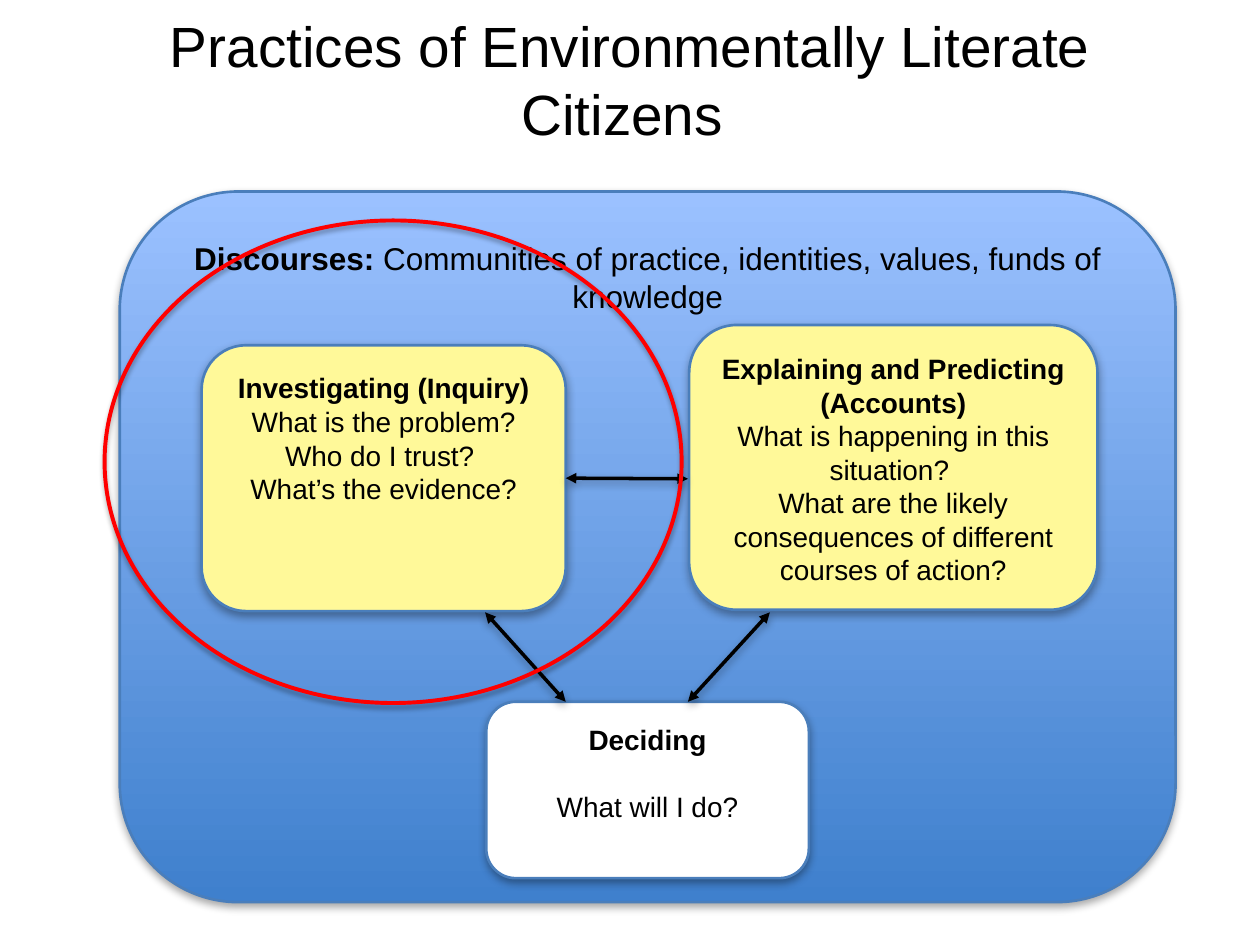
from lxml import etree
from pptx import Presentation
from pptx.dml.color import RGBColor
from pptx.enum.shapes import MSO_CONNECTOR, MSO_SHAPE
from pptx.enum.text import MSO_ANCHOR, PP_ALIGN
from pptx.oxml import parse_xml
from pptx.oxml.ns import nsdecls, qn
from pptx.util import Inches, Pt

BLACK = RGBColor(0x00, 0x00, 0x00)
WHITE = RGBColor(0xFF, 0xFF, 0xFF)
YELLOW = RGBColor(0xFF, 0xF9, 0x99)
RED = RGBColor(0xFF, 0x00, 0x00)
EDGE = RGBColor(0x4A, 0x7E, 0xBB)
SKY = RGBColor(0x9B, 0xC1, 0xFF)
BLUE = RGBColor(0x3F, 0x80, 0xCD)

TITLE = "Practices of Environmentally Literate Citizens "
PANEL = (0.95, 1.52, 8.38, 5.64)
FOCUS = (0.83, 1.75, 4.58, 3.83)
DISCOURSES = [[("Discourses:", True),
               (" Communities of practice, identities, values, funds of knowledge", False)]]
PRACTICES = {
    "explaining": dict(
        at=(5.47, 2.58, 3.24, 2.26), fill=YELLOW, gap=0,
        head="Explaining and Predicting (Accounts)",
        questions=["What is happening in this situation? ",
                   "What are the likely consequences of different courses of action?"]),
    "investigating": dict(
        at=(1.6, 2.74, 2.89, 2.11), fill=YELLOW, gap=0,
        head="Investigating (Inquiry)",
        questions=["What is the problem?", "Who do I trust? ", "What’s the evidence?"]),
    "deciding": dict(
        at=(3.86, 5.57, 2.56, 1.4), fill=WHITE, gap=19,
        head="Deciding", questions=["What will I do?"]),
}
LINKS = [((4.49, 3.8), (5.46, 3.8)),
         ((3.85, 4.86), (4.49, 5.57)),
         ((5.46, 5.57), (6.11, 4.86))]


def write(tf, paragraphs, size, gap=0, inset=0.1, anchor=MSO_ANCHOR.TOP):
    tf.word_wrap = True
    tf.vertical_anchor = anchor
    tf.margin_left = tf.margin_right = tf.margin_top = tf.margin_bottom = Inches(inset)
    for i, runs in enumerate(paragraphs):
        p = tf.paragraphs[0] if i == 0 else tf.add_paragraph()
        p.alignment = PP_ALIGN.CENTER
        if i and gap:
            p.space_before = Pt(gap)
        for text, bold in runs:
            r = p.add_run()
            r.text = text
            r.font.name, r.font.size, r.font.bold = "Arial", Pt(size), bold
            r.font.color.rgb = BLACK


def cast_shadow(sp, blur=5, dist=2.1):
    props = sp.element.spPr
    effects = props.find(qn("a:effectLst"))
    if effects is None:
        effects = etree.SubElement(props, qn("a:effectLst"))
    effects.append(parse_xml(
        f'<a:outerShdw {nsdecls("a")} blurRad="{Pt(blur)}" dist="{Pt(dist)}" dir="5400000" '
        'rotWithShape="0"><a:srgbClr val="000000"><a:alpha val="35000"/></a:srgbClr>'
        '</a:outerShdw>'))


def add_shape(slide, kind, at, line, width, **shadow):
    sp = slide.shapes.add_shape(kind, *map(Inches, at))
    sp.line.color.rgb = line
    sp.line.width = Pt(width)
    sp.shadow.inherit = False
    cast_shadow(sp, **shadow)
    return sp


def add_box(slide, at):
    sp = add_shape(slide, MSO_SHAPE.ROUNDED_RECTANGLE, at, EDGE, 1.5)
    sp.adjustments[0] = 0.167
    return sp


def add_link(slide, start, end):
    link = slide.shapes.add_connector(MSO_CONNECTOR.STRAIGHT, *map(Inches, start + end))
    link.line.color.rgb = BLACK
    link.line.width = Pt(2)
    ln = link.line._get_or_add_ln()
    for tag in ("a:headEnd", "a:tailEnd"):
        etree.SubElement(ln, qn(tag), type="triangle")
    cast_shadow(link)
    return link


def main():
    prs = Presentation()
    prs.slide_width, prs.slide_height = Inches(10), Inches(7.5)
    slide = prs.slides.add_slide(prs.slide_layouts[6])

    title = slide.shapes.add_textbox(*map(Inches, (0.5, 0.25, 9, 0.75)))
    write(title.text_frame, [[(TITLE, False)]], 32.4, anchor=MSO_ANCHOR.MIDDLE)

    panel = add_box(slide, PANEL)
    panel.fill.gradient()
    panel.fill.gradient_angle = 270
    for stop, color, position in zip(panel.fill.gradient_stops, (SKY, BLUE), (0, 1)):
        stop.color.rgb = color
        stop.position = position
    write(panel.text_frame, DISCOURSES, 18)

    boxes = {}
    for name, practice in PRACTICES.items():
        sp = boxes[name] = add_box(slide, practice["at"])
        sp.fill.solid()
        sp.fill.fore_color.rgb = practice["fill"]
        lines = [[(practice["head"], True)]] + [[(q, False)] for q in practice["questions"]]
        write(sp.text_frame, lines, 16, gap=practice["gap"])

    links = [add_link(slide, *ends) for ends in LINKS]
    links[0].begin_connect(boxes["investigating"], 3)

    focus = add_shape(slide, MSO_SHAPE.OVAL, FOCUS, RED, 2.25, blur=3.1, dist=1.8)
    focus.fill.background()

    prs.save("out.pptx")


if __name__ == "__main__":
    main()
